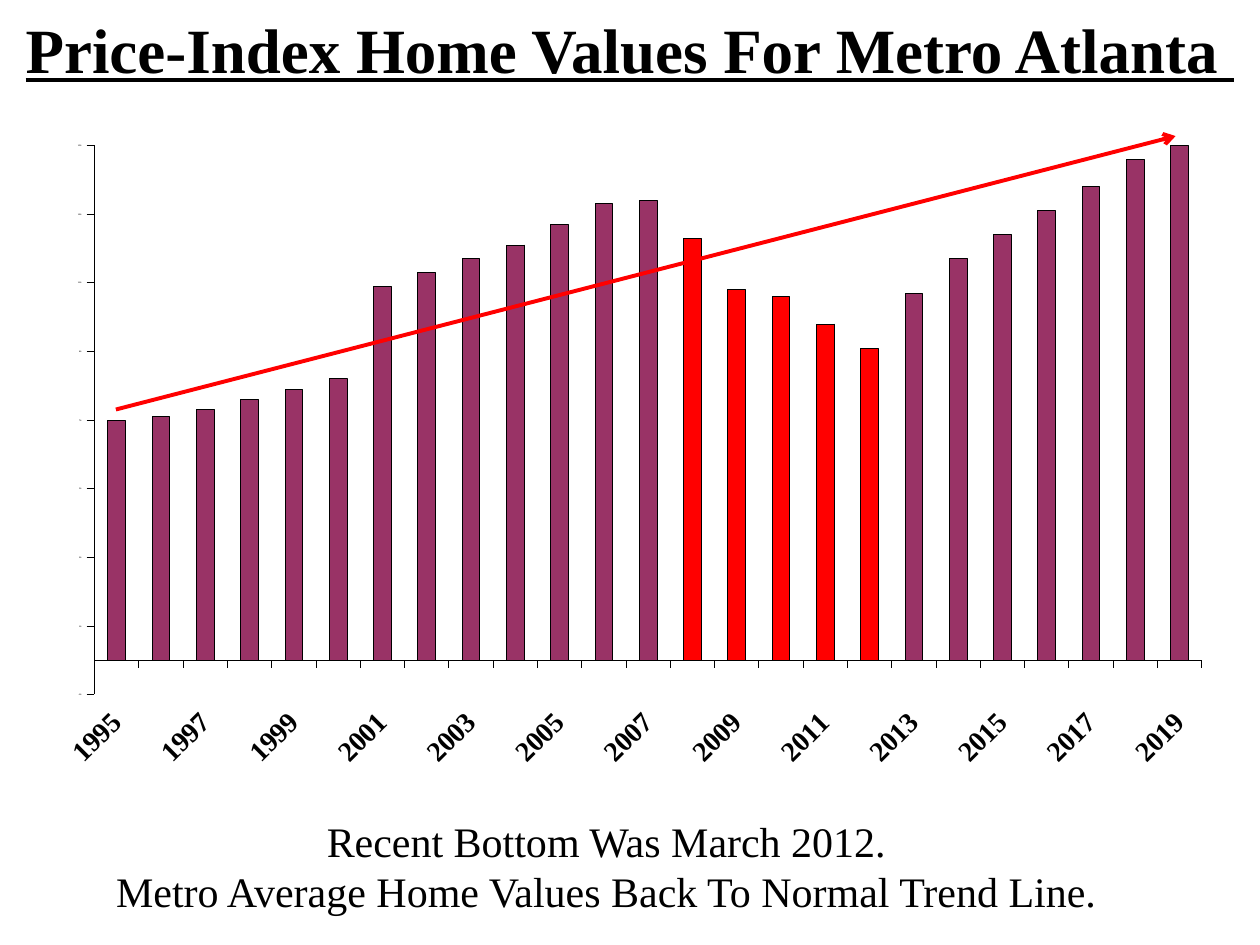
import pptx
import pptx.chart.data
import pptx.dml.color
import pptx.enum.chart
import pptx.enum.shapes
import pptx.enum.text
import pptx.oxml
import pptx.oxml.ns
import pptx.util
from dataclasses import dataclass

Pt = pptx.util.Pt
RGB = pptx.dml.color.RGBColor


@dataclass(frozen=True)
class Theme:
    font: str = "Times New Roman"
    ink: RGB = RGB(0x00, 0x00, 0x00)
    bar: RGB = RGB(0x99, 0x33, 0x66)
    accent: RGB = RGB(0xFF, 0x00, 0x00)
    title_size: float = 36
    note_size: float = 24
    year_size: float = 16
    value_size: float = 1.2


theme = Theme()


def style_font(font, size, bold=False, underline=False):
    font.name = theme.font
    font.size = Pt(size)
    font.bold = bold
    font.underline = underline
    font.color.rgb = theme.ink


def add_text(slide, lines, left, top, width, height, anchor, size, **style):
    shape = slide.shapes.add_textbox(Pt(left), Pt(top), Pt(width), Pt(height))
    text_frame = shape.text_frame
    text_frame.word_wrap = True
    text_frame.vertical_anchor = anchor
    text_frame.text = "\n".join(lines)
    for paragraph in text_frame.paragraphs:
        paragraph.alignment = pptx.enum.text.PP_ALIGN.CENTER
        style_font(paragraph.runs[0].font, size, **style)


presentation = pptx.Presentation()
presentation.slide_width = Pt(720)
presentation.slide_height = Pt(540)
slide = presentation.slides.add_slide(presentation.slide_layouts[6])

# Home values by year
years = range(1995, 2020)
home_values = [70, 71, 73, 76, 79, 82, 109, 113, 117, 121, 127, 133, 134,
               123, 108, 106, 98, 91, 107, 117, 124, 131, 138, 146, 150]
decline_years = range(2008, 2013)

chart_data = pptx.chart.data.CategoryChartData()
chart_data.categories = [str(year) for year in years]
chart_data.add_series("Series 1", home_values)
chart = slide.shapes.add_chart(
    pptx.enum.chart.XL_CHART_TYPE.COLUMN_CLUSTERED,
    Pt(21.6), Pt(42.5), Pt(671), Pt(425.5), chart_data).chart
chart.has_legend = False
chart.has_title = False
style_font(chart.font, theme.value_size, bold=True)

# Columns, with the decline picked out
plot = chart.plots[0]
plot.gap_width = 150
plot.vary_by_categories = False
series = plot.series[0]
series.invert_if_negative = False
for index, year in enumerate(years):
    column = series.points[index].format
    column.fill.solid()
    column.fill.fore_color.rgb = theme.accent if year in decline_years else theme.bar
    column.line.color.rgb = theme.ink
    column.line.width = Pt(0.06)

# Axes
for axis, size in ((chart.category_axis, theme.year_size),
                   (chart.value_axis, theme.value_size)):
    axis.has_major_gridlines = False
    axis.major_tick_mark = pptx.enum.chart.XL_TICK_MARK.OUTSIDE
    axis.minor_tick_mark = pptx.enum.chart.XL_TICK_MARK.NONE
    axis.format.line.color.rgb = theme.ink
    axis.format.line.width = Pt(0.02)
    style_font(axis.tick_labels.font, size, bold=True)
chart.value_axis.minimum_scale = -10
chart.value_axis.maximum_scale = 150
chart.value_axis.major_unit = 20

# Slanted labels for every second year, below the plot
category_axis = chart.category_axis
category_axis.tick_label_position = pptx.enum.chart.XL_TICK_LABEL_POSITION.LOW
axis_xml = category_axis._element
qn = pptx.oxml.ns.qn
axis_xml.find(qn("c:txPr")).find(qn("a:bodyPr")).set("rot", "-2700000")
namespace = pptx.oxml.ns.nsdecls("c")
axis_xml.find(qn("c:noMultiLvlLbl")).addprevious(
    pptx.oxml.parse_xml(f'<c:tickLblSkip {namespace} val="2"/>'))

# Fixed inner plot area
plot_area = chart._chartSpace.chart.plotArea
for layout in plot_area.findall(qn("c:layout")):
    plot_area.remove(layout)
plot_area.insert(0, pptx.oxml.parse_xml(
    f'<c:layout {namespace}><c:manualLayout><c:layoutTarget val="inner"/>'
    '<c:xMode val="edge"/><c:yMode val="edge"/><c:x val="0.048"/>'
    '<c:y val="0.095"/><c:w val="0.943"/><c:h val="0.738"/>'
    '</c:manualLayout></c:layout>'))

# Title and closing note
anchors = pptx.enum.text.MSO_ANCHOR
add_text(slide, ["Price-Index Home Values For Metro Atlanta "],
         0, 12.24, 720, 30.24, anchors.MIDDLE, theme.title_size,
         bold=True, underline=True)
add_text(slide, ["Recent Bottom Was March 2012.",
                 "Metro Average Home Values Back To Normal Trend Line."],
         10.5, 462.24, 672, 65.5, anchors.TOP, theme.note_size)

# Trend arrow
trend = slide.shapes.add_connector(
    pptx.enum.shapes.MSO_CONNECTOR.STRAIGHT,
    Pt(66.24), Pt(234), Pt(671.76), Pt(77.76))
trend.line.color.rgb = theme.accent
trend.line.width = Pt(2.25)
drawing = pptx.oxml.ns.nsdecls("a")
trend.line._get_or_add_ln().append(
    pptx.oxml.parse_xml(f'<a:tailEnd {drawing} type="arrow"/>'))
trend._element.spPr.append(pptx.oxml.parse_xml(f"<a:effectLst {drawing}/>"))

presentation.save("out.pptx")
